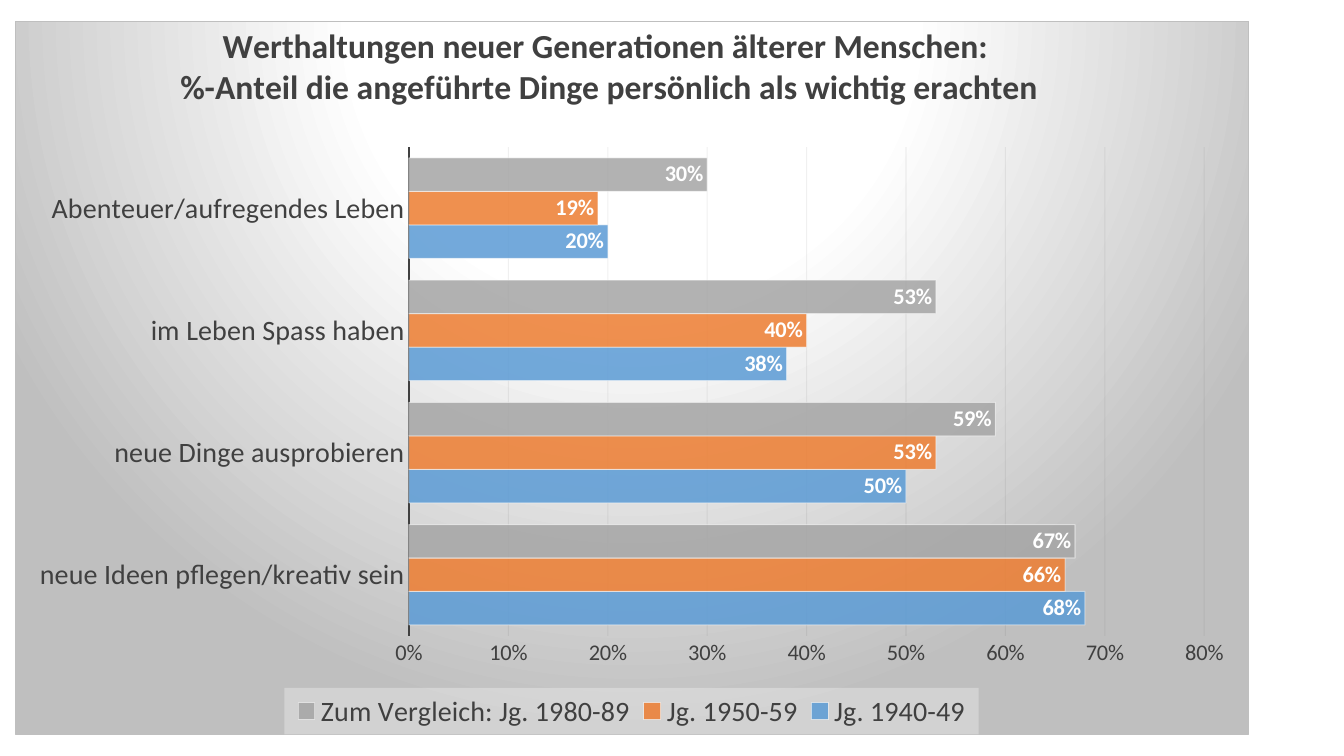
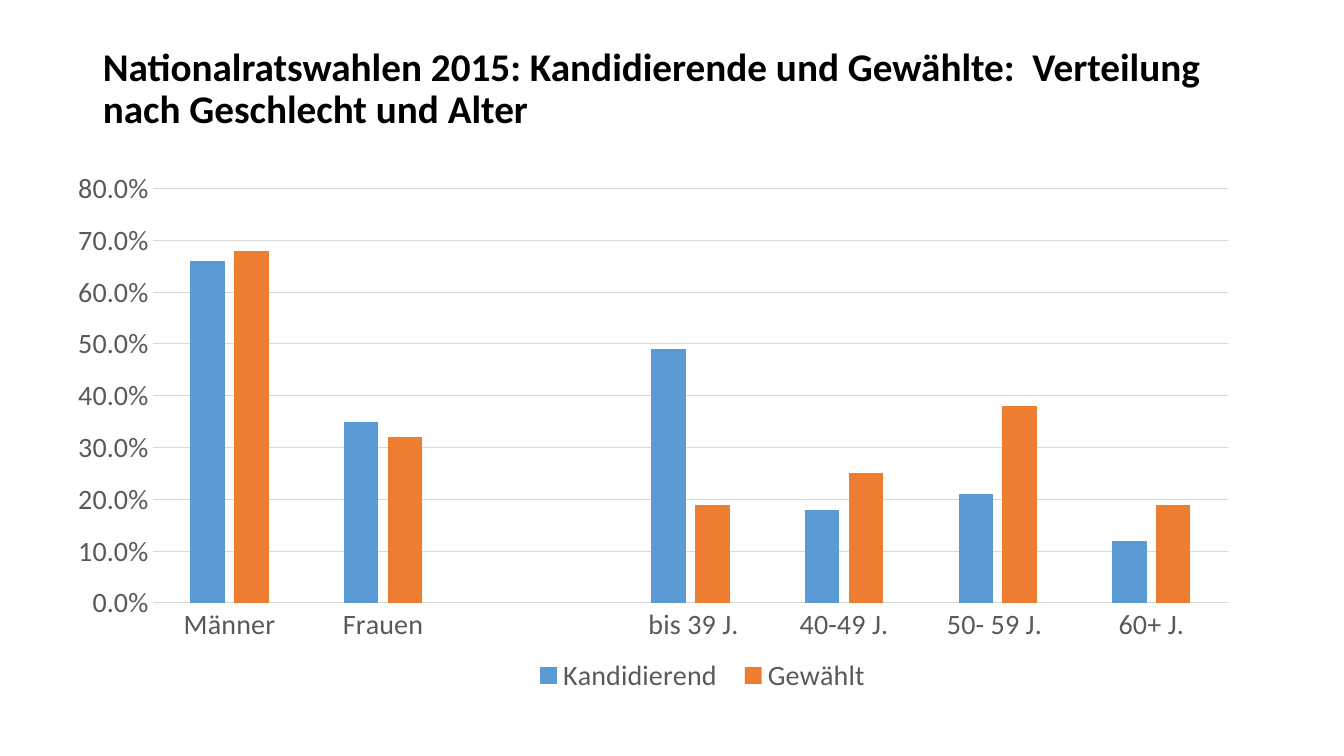
from lxml import etree
from pptx import Presentation
from pptx import util as u
from pptx.chart import data as chart_data
from pptx.dml import color as dml
from pptx.enum import chart as kinds, text
from pptx.oxml import ns, parse_xml

FONT = "Calibri"
BLUE, ORANGE, GREY = "5B9BD5", "ED7D31", "A5A5A5"
DARK, MEDIUM, PALE = "404040", "595959", "D9D9D9"


def paint(fill, colour, opacity=100):
    fill.solid()
    fill.fore_color.rgb = dml.RGBColor.from_string(colour)
    if opacity < 100:
        solid = fill._xPr.find(ns.qn("a:solidFill"))
        etree.SubElement(solid[0], ns.qn("a:alpha"), val=str(opacity * 1000))


def place(part, percents):
    for old in part.findall(ns.qn("c:layout")):
        part.remove(old)
    layout = etree.Element(ns.qn("c:layout"))
    manual = etree.SubElement(layout, ns.qn("c:manualLayout"))
    if part.tag == ns.qn("c:plotArea"):
        etree.SubElement(manual, ns.qn("c:layoutTarget"), val="inner")
    for name in ("xMode", "yMode"):
        etree.SubElement(manual, ns.qn(f"c:{name}"), val="edge")
    for name, percent in zip("xywh", percents):
        etree.SubElement(manual, ns.qn(f"c:{name}"), val=str(percent / 100))
    before = part.xpath("c:tx|c:legendPos")
    if before:
        before[-1].addnext(layout)
    else:
        part.insert(0, layout)


deck = Presentation()
deck.slide_width, deck.slide_height = u.Inches(13.33), u.Inches(7.5)
values_page = deck.slides.add_slide(deck.slide_layouts[6])
election_page = deck.slides.add_slide(deck.slide_layouts[5])

title = election_page.shapes.title
title.left, title.top = u.Inches(0.92), u.Inches(0.4)
title.width, title.height = u.Inches(11.5), u.Inches(1.45)
frame = title.text_frame
frame.word_wrap = True
frame.vertical_anchor = text.MSO_ANCHOR.MIDDLE
frame.margin_bottom = u.Inches(0.52)
para = frame.paragraphs[0]
para.alignment = text.PP_ALIGN.LEFT
para.line_spacing = 0.9
span = para.add_run()
span.text = "Nationalratswahlen 2015: Kandidierende und Gewählte:  Verteilung nach Geschlecht und Alter"
span.font.name, span.font.size, span.font.bold = FONT, u.Pt(28), True
paint(span.font.fill, "000000")

chart_specs = [
    dict(
        page=values_page, kind=kinds.XL_CHART_TYPE.BAR_CLUSTERED,
        box=(0.15, 0.21, 12.24, 7.08),
        plot=(31.9, 17.6, 64.5, 68.6), legend=(21.8, 93.5, 56.3, 6.5),
        categories=["neue Ideen pflegen/kreativ sein", "neue Dinge ausprobieren",
                    "im Leben Spass haben", "Abenteuer/aufregendes Leben"],
        series=[("Jg. 1940-49", (0.68, 0.5, 0.38, 0.2), BLUE),
                ("Jg. 1950-59", (0.66, 0.53, 0.4, 0.19), ORANGE),
                ("Zum Vergleich: Jg. 1980-89", (0.67, 0.59, 0.53, 0.3), GREY)],
        opacity=85, gap=65, overlap=0, ink=DARK, value_size=16, number_format="0%",
        axis_line=(DARK, 1.5), grid=("0D0D0D", 5),
    ),
    dict(
        page=election_page, kind=kinds.XL_CHART_TYPE.COLUMN_CLUSTERED,
        box=(0.54, 1.59, 11.88, 5.41),
        plot=(8.2, 5.2, 89.8, 76), legend=(39, 90.2, 30.2, 8.6),
        categories=["Männer", "Frauen", "", " bis 39 J.", "40-49 J.", "50- 59 J. ", "60+ J."],
        series=[("Kandidierend", (0.66, 0.35, None, 0.49, 0.18, 0.21, 0.12), BLUE),
                ("Gewählt", (0.68, 0.32, None, 0.19, 0.25, 0.38, 0.19), ORANGE)],
        opacity=100, gap=219, overlap=-27, ink=MEDIUM, value_size=20, number_format="0.0%",
        axis_line=(PALE, 0.75), grid=(PALE, 100),
    ),
]

charts = []
for spec_data in chart_specs:
    numbers = chart_data.CategoryChartData(number_format=spec_data["number_format"])
    numbers.categories = spec_data["categories"]
    for name, values, colour in spec_data["series"]:
        numbers.add_series(name, values)
    box = [u.Inches(length) for length in spec_data["box"]]
    chart = spec_data["page"].shapes.add_chart(spec_data["kind"], *box, numbers).chart
    charts.append(chart)
    chart.has_title = False
    chart.font.name, chart.font.size = FONT, u.Pt(16)

    plot = chart.plots[0]
    plot.vary_by_categories = False
    plot.gap_width, plot.overlap = spec_data["gap"], spec_data["overlap"]
    for series, (name, values, colour) in zip(plot.series, spec_data["series"]):
        paint(series.format.fill, colour, spec_data["opacity"])

    chart.has_legend = True
    chart.legend.position = kinds.XL_LEGEND_POSITION.BOTTOM
    chart.legend.include_in_layout = False
    category_axis, value_axis = chart.category_axis, chart.value_axis
    for font, size in ((chart.legend.font, 20), (category_axis.tick_labels.font, 20),
                       (value_axis.tick_labels.font, spec_data["value_size"])):
        font.name, font.size = FONT, u.Pt(size)
        paint(font.fill, spec_data["ink"])

    for axis in (category_axis, value_axis):
        axis.major_tick_mark = axis.minor_tick_mark = kinds.XL_TICK_MARK.NONE
    axis_colour, axis_width = spec_data["axis_line"]
    category_axis.format.line.width = u.Pt(axis_width)
    paint(category_axis.format.line.fill, axis_colour)
    value_axis.minimum_scale, value_axis.maximum_scale, value_axis.major_unit = 0, 0.8, 0.1
    value_axis.tick_labels.number_format = spec_data["number_format"]
    value_axis.tick_labels.number_format_is_linked = False
    value_axis.format.line.fill.background()
    value_axis.has_major_gridlines = True
    grid_line = value_axis.major_gridlines.format.line
    grid_line.width = u.Pt(0.75)
    paint(grid_line.fill, *spec_data["grid"])
    place(chart._chartSpace.xpath("c:chart/c:plotArea")[0], spec_data["plot"])
    place(chart.legend._element, spec_data["legend"])

values_chart = charts[0]
for series in values_chart.plots[0].series:
    series.format.line.width = u.Pt(0.75)
    paint(series.format.line.fill, "FFFFFF", 50)
    labels = series.data_labels
    labels.show_value = True
    labels.number_format, labels.number_format_is_linked = "0%", False
    labels.position = kinds.XL_LABEL_POSITION.INSIDE_END
    labels.font.name, labels.font.size, labels.font.bold = FONT, u.Pt(16), True
    paint(labels.font.fill, "FFFFFF")

values_chart.has_title = True
heading = values_chart.chart_title.text_frame
lines = ["Werthaltungen neuer Generationen älterer Menschen: ",
         "%-Anteil die angeführte Dinge persönlich als wichtig erachten"]
for index, line in enumerate(lines):
    para = heading.add_paragraph() if index else heading.paragraphs[0]
    para.alignment = text.PP_ALIGN.CENTER
    span = para.add_run()
    span.text = line
    span.font.name, span.font.size, span.font.bold = FONT, u.Pt(24), True
    paint(span.font.fill, DARK)
place(values_chart.chart_title._element, (13.1, 0))

stops = "".join(
    f'<a:gs pos="{percent * 1000}"><a:srgbClr val="{colour}"/></a:gs>'
    for percent, colour in ((0, "FFFFFF"), (39, "FFFFFF"), (100, "BFBFBF")))
backdrop = parse_xml(
    f'<c:spPr {ns.nsdecls("c", "a")}><a:gradFill><a:gsLst>{stops}</a:gsLst>'
    '<a:path path="circle"><a:fillToRect l="50000" t="-80000" r="50000" b="180000"/></a:path>'
    '</a:gradFill><a:ln w="9525"><a:solidFill><a:srgbClr val="BFBFBF"/></a:solidFill></a:ln></c:spPr>')
values_chart._chartSpace.xpath("c:chart")[0].addnext(backdrop)
legend_panel = parse_xml(
    f'<c:spPr {ns.nsdecls("c", "a")}><a:solidFill><a:srgbClr val="F2F2F2">'
    '<a:alpha val="39000"/></a:srgbClr></a:solidFill></c:spPr>')
values_chart.legend._element.xpath("c:txPr")[0].addprevious(legend_panel)

deck.save("out.pptx")
